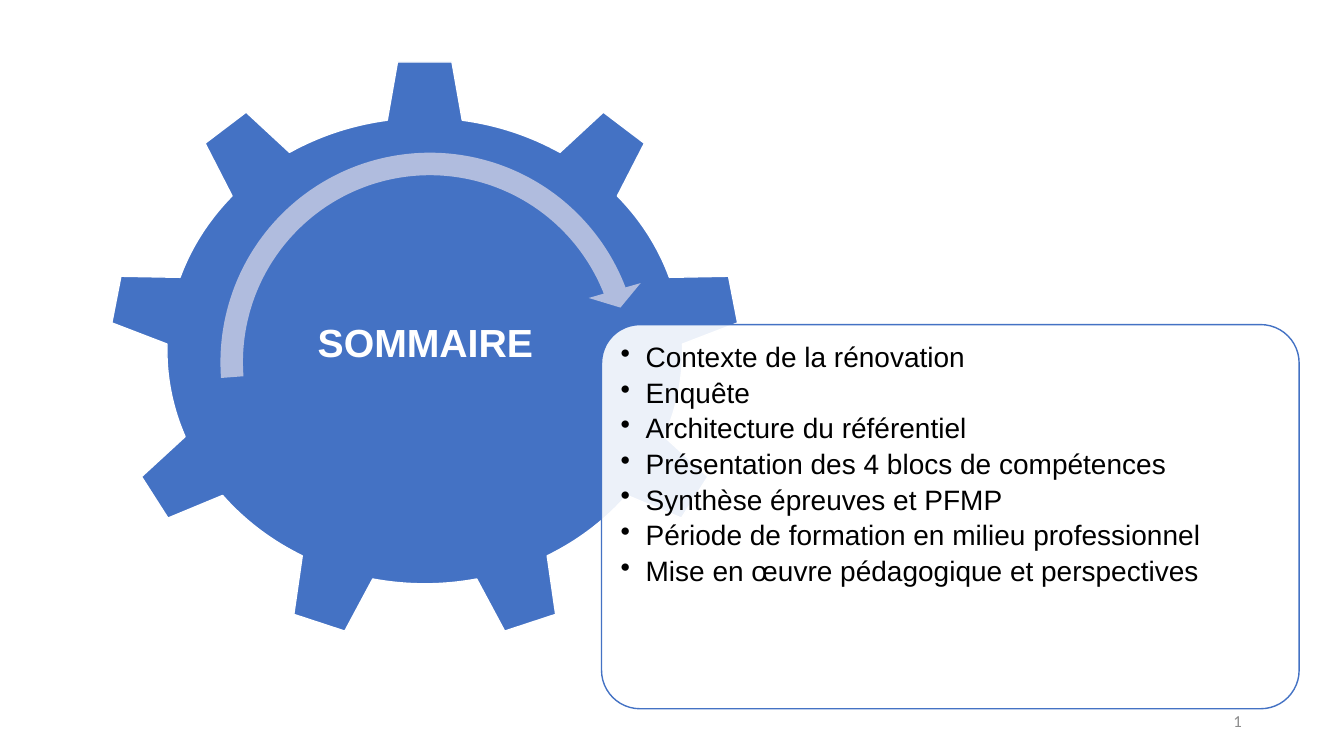
import pptx
import pptx.dml.color
import pptx.enum.shapes
import pptx.enum.text
import pptx.oxml.ns
import pptx.util
from lxml import etree

Cm, Pt = pptx.util.Cm, pptx.util.Pt
SHAPE = pptx.enum.shapes.MSO_SHAPE
ALIGN = pptx.enum.text.PP_ALIGN
ANCHOR = pptx.enum.text.MSO_ANCHOR
qn = pptx.oxml.ns.qn

COLORS = {
    "blue": "4472C4",
    "arrow": "B0BCDE",
    "white": "FFFFFF",
    "black": "000000",
    "grey": "8C8C8C",
}

TOPICS = [
    "Contexte de la rénovation",
    "Enquête",
    "Architecture du référentiel",
    "Présentation des 4 blocs de compétences",
    "Synthèse épreuves et PFMP",
    "Période de formation en milieu professionnel",
    "Mise en œuvre pédagogique et perspectives",
]


def rgb(name):
    return pptx.dml.color.RGBColor.from_string(COLORS[name])


def add_filled_shape(s, kind, box, fill, line=None, adjustments=()):
    sp = s.shapes.add_shape(kind, *map(Cm, box))
    sp.shadow.inherit = False
    sp.fill.solid()
    sp.fill.fore_color.rgb = rgb(fill)
    if line:
        sp.line.color.rgb = rgb(line)
        sp.line.width = Pt(1)
    else:
        sp.line.fill.background()
    for i, value in enumerate(adjustments):
        sp.adjustments[i] = value
    return sp


def set_opacity(sp, percent):
    color = sp.fill._xPr.find(qn("a:solidFill"))[0]
    etree.SubElement(color, qn("a:alpha"), val=str(percent * 1000))


def add_text_frame(s, box, inset, anchor=ANCHOR.TOP):
    tf = s.shapes.add_textbox(*map(Cm, box)).text_frame
    tf.word_wrap = True
    tf.vertical_anchor = anchor
    tf.margin_left = tf.margin_right = Cm(inset)
    tf.margin_top = tf.margin_bottom = Cm(inset)
    return tf


def style_paragraph(p, size, color, align, font="Arial", bold=False):
    p.alignment = align
    p.font.name = font
    p.font.size = Pt(size)
    p.font.bold = bold
    p.font.color.rgb = rgb(color)


def add_bullet(p, indent):
    """Give the paragraph a round bullet with a hanging indent."""
    pPr = p._p.get_or_add_pPr()
    pPr.set("marL", str(Cm(indent)))
    pPr.set("indent", str(-Cm(indent)))
    bullet = etree.Element(qn("a:buChar"), char="•")
    pPr.find(qn("a:defRPr")).addprevious(bullet)


def add_title(s, box, text):
    tf = add_text_frame(s, box, 0.1, ANCHOR.MIDDLE)
    p = tf.paragraphs[0]
    p.text = text
    p.line_spacing = 0.9
    style_paragraph(p, 28, "white", ALIGN.CENTER, bold=True)


def add_bullet_list(s, box, items):
    tf = add_text_frame(s, box, 0.2)
    for i, item in enumerate(items):
        p = tf.add_paragraph() if i else tf.paragraphs[0]
        p.text = item
        p.line_spacing = 0.9
        p.space_after = Pt(3.8)
        style_paragraph(p, 20, "black", ALIGN.LEFT)
        add_bullet(p, 0.63)


def add_slide_number(s, box):
    tf = add_text_frame(s, box, 0.25, ANCHOR.MIDDLE)
    p = tf.paragraphs[0]
    style_paragraph(p, 12, "grey", ALIGN.RIGHT, font="Calibri")
    field = etree.SubElement(
        p._p, qn("a:fld"), type="slidenum",
        id="{5B1D7A52-3C64-4E8F-9A10-2F6C8D7E4B31}")
    etree.SubElement(field, qn("a:rPr"), lang="fr-FR")
    etree.SubElement(field, qn("a:t")).text = "1"


def main():
    prs = pptx.Presentation()
    prs.slide_width, prs.slide_height = Cm(33.87), Cm(19.05)
    s = prs.slides.add_slide(prs.slide_layouts[6])

    add_filled_shape(s, SHAPE.GEAR_9, (2.74, 1.5, 15.93, 14.68), "blue", "white")
    add_title(s, (5.87, 4.93, 9.7, 7.54), "SOMMAIRE")

    card = add_filled_shape(s, SHAPE.ROUNDED_RECTANGLE, (15.16, 8.18, 17.58, 9.68),
                            "white", "blue", [0.1])
    set_opacity(card, 90)
    add_bullet_list(s, (15.44, 8.46, 17.02, 9.12), TOPICS)

    arrow = add_filled_shape(s, SHAPE.CIRCULAR_ARROW, (5.16, 3.45, 11.35, 11.35),
                             "arrow", adjustments=[0.05, 3.13, 32.59, 150.7, 0.06])
    arrow.rotation = 284.5

    add_slide_number(s, (23.93, 17.65, 7.62, 1.02))
    prs.save("out.pptx")


if __name__ == "__main__":
    main()
